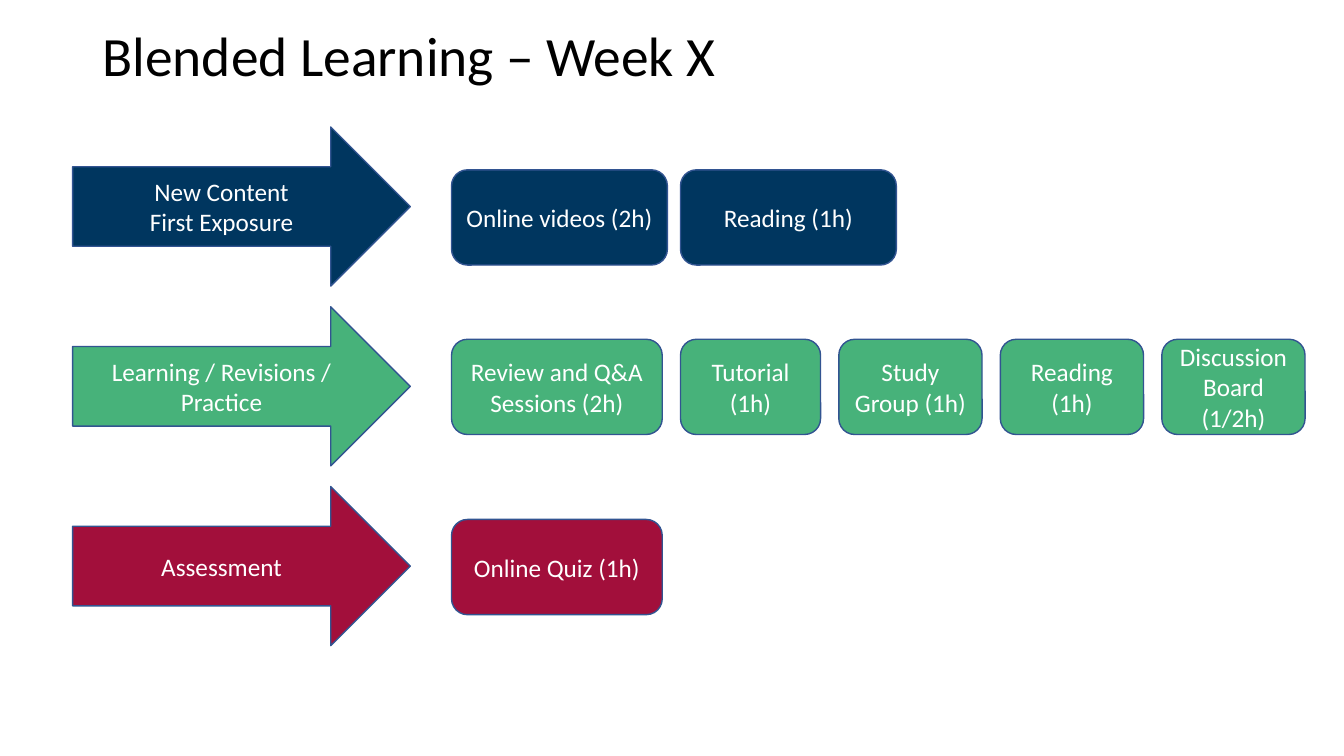
from dataclasses import dataclass

from pptx import Presentation
from pptx.dml.color import RGBColor as Rgb
from pptx.enum.shapes import MSO_SHAPE as Kind
from pptx.enum.text import MSO_ANCHOR as Anchor, MSO_AUTO_SIZE as Fit, PP_ALIGN as Align
from pptx.slide import Slide
from pptx.text.text import TextFrame as Frame
from pptx.util import Cm, Pt


@dataclass(frozen=True)
class Theme:
    font: str = "Calibri"
    head: float = 39.6
    body: float = 18
    navy: str = "00365F"
    green: str = "47B27A"
    red: str = "A20F3B"
    edge: str = "325491"
    white: str = "FFFFFF"
    black: str = "000000"


@dataclass(frozen=True)
class Box:
    left: float
    top: float
    width: float
    height: float


@dataclass(frozen=True)
class Card:
    text: str
    width: float


@dataclass(frozen=True)
class Row:
    label: str
    fill: str
    top: float
    gap: float
    cards: tuple[Card, ...]


THEME = Theme()
ARROW = Box(1.83, 3.2, 8.51, 4.01)
PITCH = 4.53
CARD_LEFT = 11.38
CARD_HEIGHT = 2.4

ROWS = (
    Row("New Content\vFirst Exposure", THEME.navy, 4.28, 0.33, (
        Card("Online videos (2h)", 5.44),
        Card("Reading (1h)", 5.44),
    )),
    Row("Learning / Revisions / Practice", THEME.green, 8.55, 0.46, (
        Card("Review and Q&A Sessions (2h)", 5.31),
        Card("Tutorial (1h)", 3.53),
        Card("Study Group (1h)", 3.61),
        Card("Reading (1h)", 3.61),
        Card("Discussion Board (1/2h)", 3.61),
    )),
    Row("Assessment", THEME.red, 13.09, 0.46, (
        Card("Online Quiz (1h)", 5.31),
    )),
)


def write(frame: Frame, text: str, size: float, color: str, align: Align) -> None:
    frame.text = text
    frame.word_wrap = True
    frame.auto_size = Fit.NONE
    frame.vertical_anchor = Anchor.MIDDLE
    para = frame.paragraphs[0]
    para.alignment = align
    para.font.name = THEME.font
    para.font.size = Pt(size)
    para.font.color.rgb = Rgb.from_string(color)


def draw_shape(slide: Slide, kind: Kind, box: Box, fill: str, text: str) -> None:
    shape = slide.shapes.add_shape(
        kind, Cm(box.left), Cm(box.top), Cm(box.width), Cm(box.height))
    shape.shadow.inherit = False
    shape.fill.solid()
    shape.fill.fore_color.rgb = Rgb.from_string(fill)
    shape.line.color.rgb = Rgb.from_string(THEME.edge)
    shape.line.width = Pt(1)
    write(shape.text_frame, text, THEME.body, THEME.white, Align.CENTER)


def draw_row(slide: Slide, row: Row, index: int) -> None:
    arrow = Box(ARROW.left, ARROW.top + index * PITCH, ARROW.width, ARROW.height)
    draw_shape(slide, Kind.RIGHT_ARROW, arrow, row.fill, row.label)
    left = CARD_LEFT
    for card in row.cards:
        box = Box(left, row.top, card.width, CARD_HEIGHT)
        draw_shape(slide, Kind.ROUNDED_RECTANGLE, box, row.fill, card.text)
        left += card.width + row.gap


def draw_title(slide: Slide, text: str) -> None:
    title = slide.shapes.title
    title.left, title.top = Cm(2.33), Cm(0.53)
    title.width, title.height = Cm(29.21), Cm(1.91)
    write(title.text_frame, text, THEME.head, THEME.black, Align.LEFT)
    title.text_frame.paragraphs[0].line_spacing = 0.9


def main() -> None:
    deck = Presentation()
    deck.slide_width, deck.slide_height = Cm(33.87), Cm(19.05)
    slide = deck.slides.add_slide(deck.slide_layouts[5])
    draw_title(slide, "Blended Learning – Week X")
    for index, row in enumerate(ROWS):
        draw_row(slide, row, index)
    deck.save("out.pptx")


if __name__ == "__main__":
    main()
